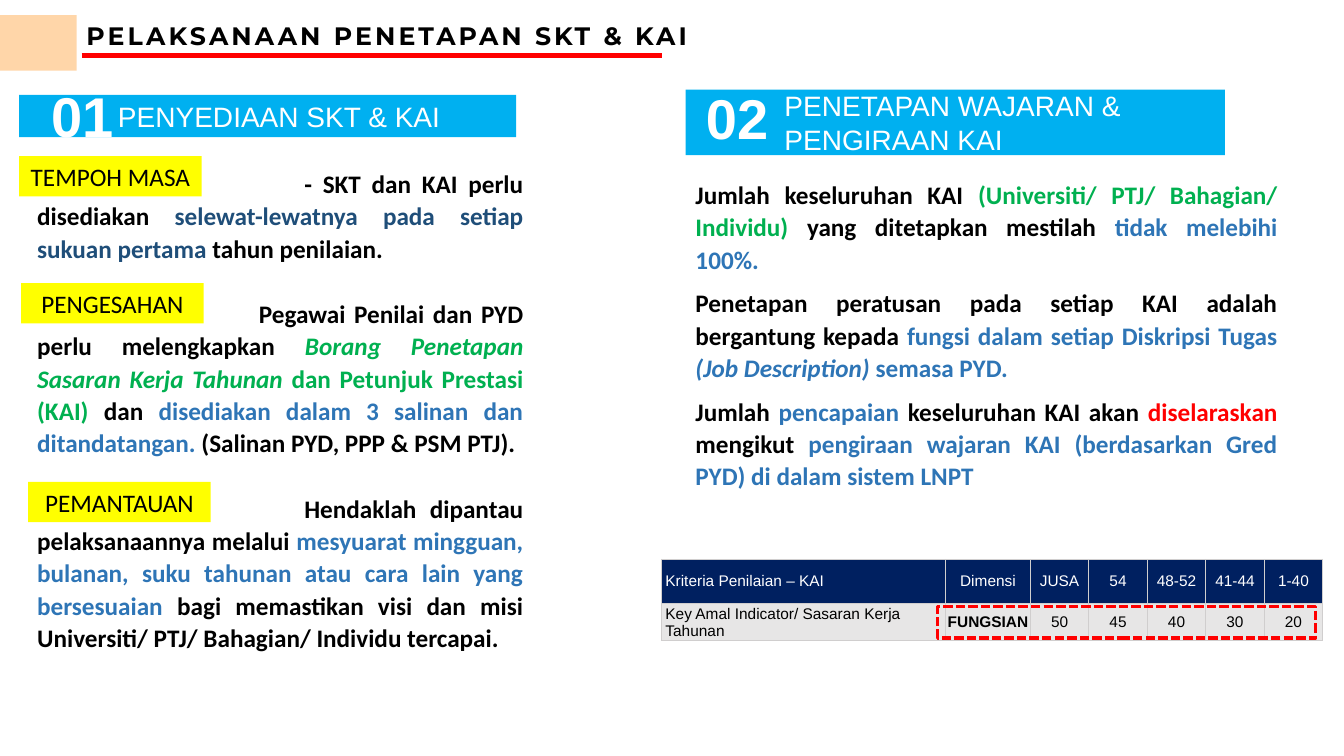
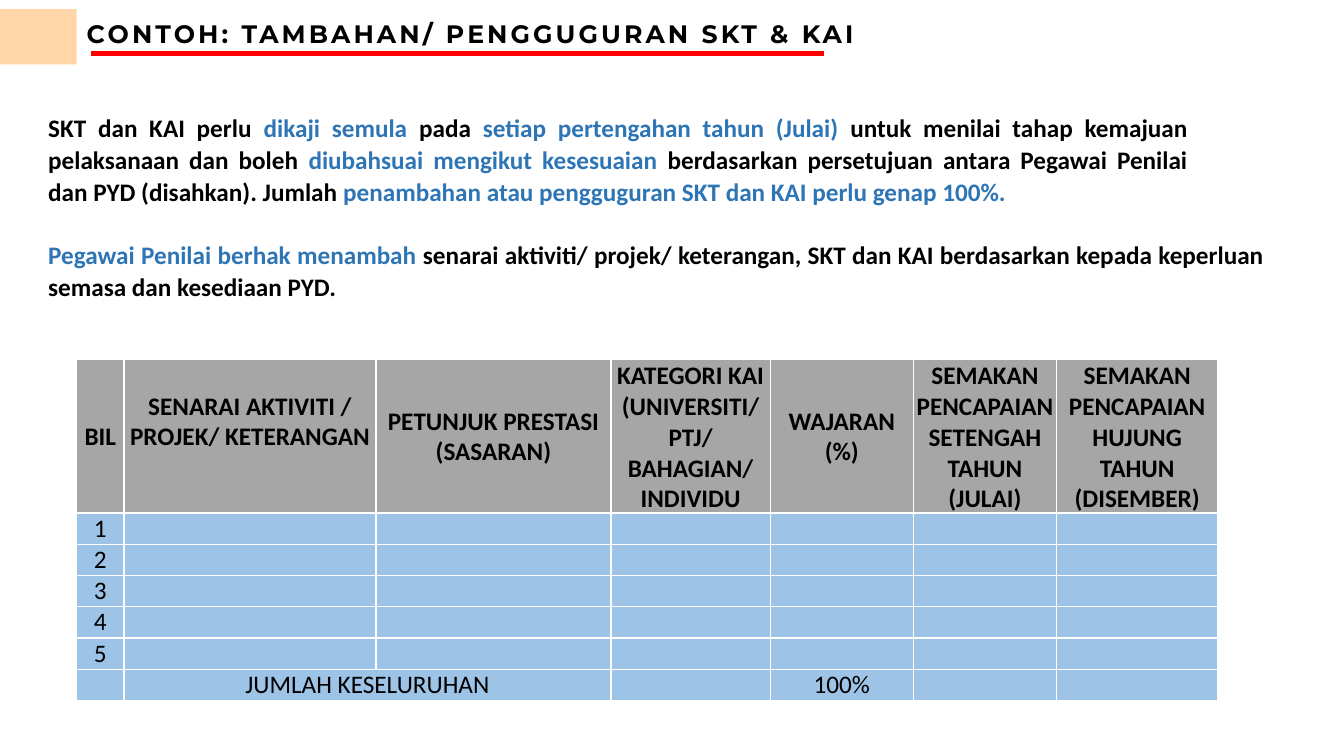
from lxml import etree
from pptx import Presentation
from pptx.dml.color import RGBColor
from pptx.enum.dml import MSO_LINE
from pptx.enum.shapes import MSO_CONNECTOR, MSO_SHAPE
from pptx.enum.text import MSO_ANCHOR, PP_ALIGN
from pptx.oxml.ns import qn
from pptx.util import Inches, Pt

BLACK = RGBColor(0x00, 0x00, 0x00)
WHITE = RGBColor(0xFF, 0xFF, 0xFF)
RED = RGBColor(0xFF, 0x00, 0x00)
GREEN = RGBColor(0x00, 0xB0, 0x50)
BLUE = RGBColor(0x2E, 0x75, 0xB6)
DARK_BLUE = RGBColor(0x1F, 0x4E, 0x79)
SKY = RGBColor(0x00, 0xB0, 0xF0)
NAVY = RGBColor(0x00, 0x20, 0x60)
YELLOW = RGBColor(0xFF, 0xFF, 0x00)
PEACH = RGBColor(0xFF, 0xD6, 0xA9)
PALE_GREY = RGBColor(0xE7, 0xE6, 0xE6)
BORDER_GREY = RGBColor(0xD0, 0xCE, 0xCE)
HEADER_GREY = RGBColor(0xA6, 0xA6, 0xA6)
ROW_BLUE = RGBColor(0x9D, 0xC3, 0xE6)

LEFT, CENTER, JUSTIFY = PP_ALIGN.LEFT, PP_ALIGN.CENTER, PP_ALIGN.JUSTIFY
TOP, MIDDLE = MSO_ANCHOR.TOP, MSO_ANCHOR.MIDDLE
RECTANGLE = MSO_SHAPE.RECTANGLE
STRAIGHT = MSO_CONNECTOR.STRAIGHT
SHORT_DASH = MSO_LINE.SQUARE_DOT

TITLE = {"name": "Montserrat", "size": Pt(18), "bold": True}
BODY = {"name": "Calibri", "size": Pt(18), "bold": True}
PLAIN = {**BODY, "bold": False}
BAND = {"name": "Arial", "size": Pt(20), "bold": False}
NUMBER = {"name": "Arial", "size": Pt(40), "bold": True}
SMALL = {"name": "Arial", "size": Pt(11), "bold": False}
SMALL_BOLD = {**SMALL, "bold": True}

PREPARATION = [
    (2.65, [("- SKT dan KAI perlu disediakan ", BLACK),
            ("selewat-lewatnya pada setiap sukuan pertama ", DARK_BLUE),
            ("tahun penilaian.", BLACK)]),
    (2.2, [("Pegawai Penilai dan PYD perlu melengkapkan ", BLACK),
           ("Borang Penetapan Sasaran Kerja Tahunan ", GREEN, True),
           ("dan Petunjuk Prestasi (KAI) ", GREEN),
           ("dan ", BLACK),
           ("disediakan dalam 3 salinan dan ditandatangan. ", BLUE),
           ("(Salinan PYD, PPP & PSM PTJ).", BLACK)]),
    (2.65, [("Hendaklah dipantau pelaksanaannya melalui ", BLACK),
            ("mesyuarat mingguan, bulanan, suku tahunan atau cara lain yang bersesuaian ", BLUE),
            ("bagi memastikan visi dan misi Universiti/ PTJ/ Bahagian/ Individu tercapai.", BLACK)]),
]
WEIGHTING = [
    (0, [("Jumlah keseluruhan KAI ", BLACK),
         ("(Universiti/ PTJ/ Bahagian/ Individu) ", GREEN),
         ("yang ditetapkan mestilah ", BLACK),
         ("tidak melebihi 100%.", BLUE)]),
    (0, [("Penetapan peratusan pada setiap KAI adalah bergantung kepada ", BLACK),
         ("fungsi dalam setiap Diskripsi Tugas ", BLUE),
         ("(Job Description) ", BLUE, True),
         ("semasa PYD.", BLUE)]),
    (0, [("Jumlah ", BLACK),
         ("pencapaian ", BLUE),
         ("keseluruhan KAI akan ", BLACK),
         ("diselaraskan ", RED),
         ("mengikut ", BLACK),
         ("pengiraan wajaran KAI (berdasarkan Gred PYD) di dalam sistem LNPT", BLUE)]),
]
REVIEW = [
    (0, [("SKT dan KAI perlu ", BLACK),
         ("dikaji semula ", BLUE),
         ("pada ", BLACK),
         ("setiap pertengahan tahun (Julai) ", BLUE),
         ("untuk menilai tahap kemajuan pelaksanaan dan boleh ", BLACK),
         ("diubahsuai mengikut kesesuaian ", BLUE),
         ("berdasarkan persetujuan antara Pegawai Penilai dan PYD (disahkan). Jumlah ", BLACK),
         ("penambahan atau pengguguran SKT dan KAI perlu genap 100%.", BLUE)]),
]
AUTHORITY = [
    (0, [("Pegawai Penilai berhak menambah ", BLUE),
         ("senarai aktiviti/ projek/ keterangan, SKT dan KAI berdasarkan kepada "
          "keperluan semasa dan kesediaan PYD.", BLACK)]),
]
CRITERIA = [
    ["Kriteria Penilaian – KAI", "Dimensi", "JUSA", "54", "48-52", "41-44", "1-40"],
    ["Key Amal Indicator/ Sasaran Kerja Tahunan", "FUNGSIAN", "50", "45", "40", "30", "20"],
]
ACTIVITY_HEADS = [
    "BIL", "SENARAI AKTIVITI / PROJEK/ KETERANGAN", "PETUNJUK PRESTASI (SASARAN)",
    "KATEGORI KAI (UNIVERSITI/ PTJ/ BAHAGIAN/ INDIVIDU", "WAJARAN (%)",
    "SEMAKAN PENCAPAIAN SETENGAH TAHUN (JULAI)",
    "SEMAKAN PENCAPAIAN HUJUNG TAHUN (DISEMBER)",
]


def apply(target, formats):
    """Set every attribute named in a dict of formats."""
    for name, value in formats.items():
        setattr(target, name, value)


def inches(*lengths):
    """Turn numbers into lengths."""
    return [Inches(length) for length in lengths]


def add_span(para, text, font, color, italic=False):
    """Add a formatted run to a paragraph."""
    span = para.add_run()
    span.text = text
    apply(span.font, {**font, "italic": italic})
    span.font.color.rgb = color
    return span


def add_text(page, box, text, font, color, align=LEFT):
    """Place a one-line text box and return its run."""
    frame = page.shapes.add_textbox(*inches(*box)).text_frame
    frame.word_wrap = True
    para = frame.paragraphs[0]
    para.alignment = align
    return add_span(para, text, font, color)


def add_rectangle(page, box, fill=None):
    """Place a plain rectangle without line or shadow."""
    shape = page.shapes.add_shape(RECTANGLE, *inches(*box))
    shape.shadow.inherit = False
    shape.line.fill.background()
    if fill is None:
        shape.fill.background()
    else:
        shape.fill.solid()
        shape.fill.fore_color.rgb = fill
    return shape


def add_heading(page, top, text, width, rule):
    """Place the peach block, the spaced title and its red rule."""
    add_rectangle(page, (0, top, 0.76, 0.55), PEACH)
    title = add_text(page, (0.76, rule - 0.4, width, 0.4), text, TITLE, BLACK)
    title.font._element.set("spc", "220")


def add_rule(page, left, right, top):
    """Draw the red rule below a title."""
    line = page.shapes.add_connector(STRAIGHT, *inches(left, top, right, top))
    line.line.color.rgb = RED
    line.line.width = Pt(3)
    etree.SubElement(line._element.spPr, qn("a:effectLst"))


def add_band(page, box, number, number_box, text):
    """Place a numbered blue section band."""
    band = add_rectangle(page, box, SKY)
    apply(band.text_frame, {"margin_left": Inches(0.98), "word_wrap": True,
                            "vertical_anchor": MIDDLE})
    para = band.text_frame.paragraphs[0]
    para.alignment = LEFT
    add_span(para, text, BAND, WHITE)
    add_text(page, number_box, number, NUMBER, WHITE, CENTER)


def add_label(page, left, top, text):
    """Place a yellow label."""
    label = add_rectangle(page, (left, top, 1.81, 0.4), YELLOW)
    para = label.text_frame.paragraphs[0]
    para.alignment = CENTER
    add_span(para, text, PLAIN, BLACK)


def add_body(page, box, paragraphs, gap=8):
    """Place justified paragraphs, each a first-line indent and its runs."""
    frame = page.shapes.add_textbox(*inches(*box)).text_frame
    apply(frame, {"word_wrap": True, "vertical_anchor": TOP})
    for index, (indent, spans) in enumerate(paragraphs):
        para = frame.add_paragraph() if index else frame.paragraphs[0]
        apply(para, {"alignment": JUSTIFY, "line_spacing": 1.07,
                     "space_after": Pt(gap)})
        para._p.get_or_add_pPr().set("indent", str(Inches(indent)))
        for text, color, *italic in spans:
            add_span(para, text, BODY, color, bool(italic))


def add_grid(page, left, top, widths, heights):
    """Place an empty table with the given column widths and row heights."""
    box = inches(left, top, sum(widths), sum(heights))
    table = page.shapes.add_table(len(heights), len(widths), *box).table
    for column, width in zip(table.columns, widths):
        column.width = Inches(width)
    for row, height in zip(table.rows, heights):
        row.height = Inches(height)
    return table


def fill_cell(cell, text, font, color, fill, border, align, side, top=0):
    """Format one cell with its margins, borders, fill and text."""
    apply(cell, {"margin_left": Inches(side), "margin_right": Inches(side),
                 "margin_top": Inches(top), "margin_bottom": 0,
                 "vertical_anchor": MIDDLE})
    properties = cell._tc.get_or_add_tcPr()
    for edge in ("a:lnL", "a:lnR", "a:lnT", "a:lnB"):
        line = etree.SubElement(properties, qn(edge), w=str(Pt(1)))
        solid = etree.SubElement(line, qn("a:solidFill"))
        etree.SubElement(solid, qn("a:srgbClr"), val=str(border))
    cell.fill.solid()
    cell.fill.fore_color.rgb = fill
    para = cell.text_frame.paragraphs[0]
    para.alignment = align
    apply(para.font, font)
    if text:
        add_span(para, text, font, color)


def add_criteria_table(page, left, top):
    """Place the weighting table with its dashed highlight."""
    table = add_grid(page, left, top, [2.82, 0.84] + [0.58] * 5, [0.44, 0.36])
    for row, (color, fill) in enumerate([(WHITE, NAVY), (BLACK, PALE_GREY)]):
        for column, text in enumerate(CRITERIA[row]):
            font = SMALL_BOLD if (row, column) == (1, 1) else SMALL
            fill_cell(table.cell(row, column), text, font, color, fill, BORDER_GREY,
                      CENTER if column else LEFT, 0 if column == 1 else 0.04)
    highlight = add_rectangle(page, (left + 2.74, top + 0.47, 3.75, 0.31))
    highlight.line.color.rgb = RED
    apply(highlight.line, {"width": Pt(2.25), "dash_style": SHORT_DASH})


def add_activity_table(page, left, top):
    """Place the form for activities, with numbered rows and a total."""
    widths = [0.47, 2.5, 2.33, 1.58, 1.42, 1.42, 1.6]
    table = add_grid(page, left, top, widths, [1.52] + [0.31] * 6)
    blanks = [""] * (len(widths) - 1)
    rows = [ACTIVITY_HEADS] + [[str(number)] + blanks for number in range(1, 6)]
    rows.append(["", "JUMLAH KESELURUHAN", "", "", "100%", "", ""])
    for row, texts in enumerate(rows):
        font, fill = (PLAIN, ROW_BLUE) if row else (BODY, HEADER_GREY)
        for column, text in enumerate(texts):
            fill_cell(table.cell(row, column), text, font, BLACK, fill, WHITE,
                      CENTER, 0.01, 0 if row else 0.01)
    table.cell(0, 1).margin_bottom = Inches(0.3)
    table.cell(6, 1).merge(table.cell(6, 2))


def build_setting_slide(page):
    """Build the slide on setting targets and indicators."""
    add_heading(page, 0.15, "PELAKSANAAN PENETAPAN SKT & KAI", 6.53, 0.55)
    add_rule(page, 0.81, 6.57, 0.55)
    add_body(page, (0.27, 1.6, 5.02, 4.96), PREPARATION, 23.5)
    add_body(page, (6.8, 1.71, 5.97, 3.24), WEIGHTING)
    add_band(page, (0.19, 0.94, 4.93, 0.42), "01", (0.19, 0.76, 1.25, 0.77),
             "PENYEDIAAN SKT & KAI")
    add_band(page, (6.8, 0.89, 5.35, 0.65), "02", (6.63, 0.78, 1.36, 0.77),
             "PENETAPAN WAJARAN & PENGIRAAN KAI")
    for left, top, text in [(0.19, 1.55, "TEMPOH MASA"), (0.21, 2.81, "PENGESAHAN"),
                            (0.28, 4.78, "PEMANTAUAN")]:
        add_label(page, left, top, text)
    add_criteria_table(page, 6.56, 5.55)


def build_review_slide(page):
    """Build the slide on adding and dropping targets."""
    add_heading(page, 0.09, "CONTOH: TAMBAHAN/ PENGGUGURAN SKT & KAI", 8.25, 0.53)
    add_rule(page, 0.9, 8.17, 0.53)
    add_activity_table(page, 0.76, 3.57)
    add_body(page, (0.38, 1.04, 11.5, 1.5), REVIEW)
    add_body(page, (0.38, 2.3, 12.26, 0.75), AUTHORITY)


def main():
    """Build and save the deck."""
    deck = Presentation()
    apply(deck, {"slide_width": Inches(13.33), "slide_height": Inches(7.5)})
    for build in (build_setting_slide, build_review_slide):
        build(deck.slides.add_slide(deck.slide_layouts[6]))
    deck.save("out.pptx")


if __name__ == "__main__":
    main()
